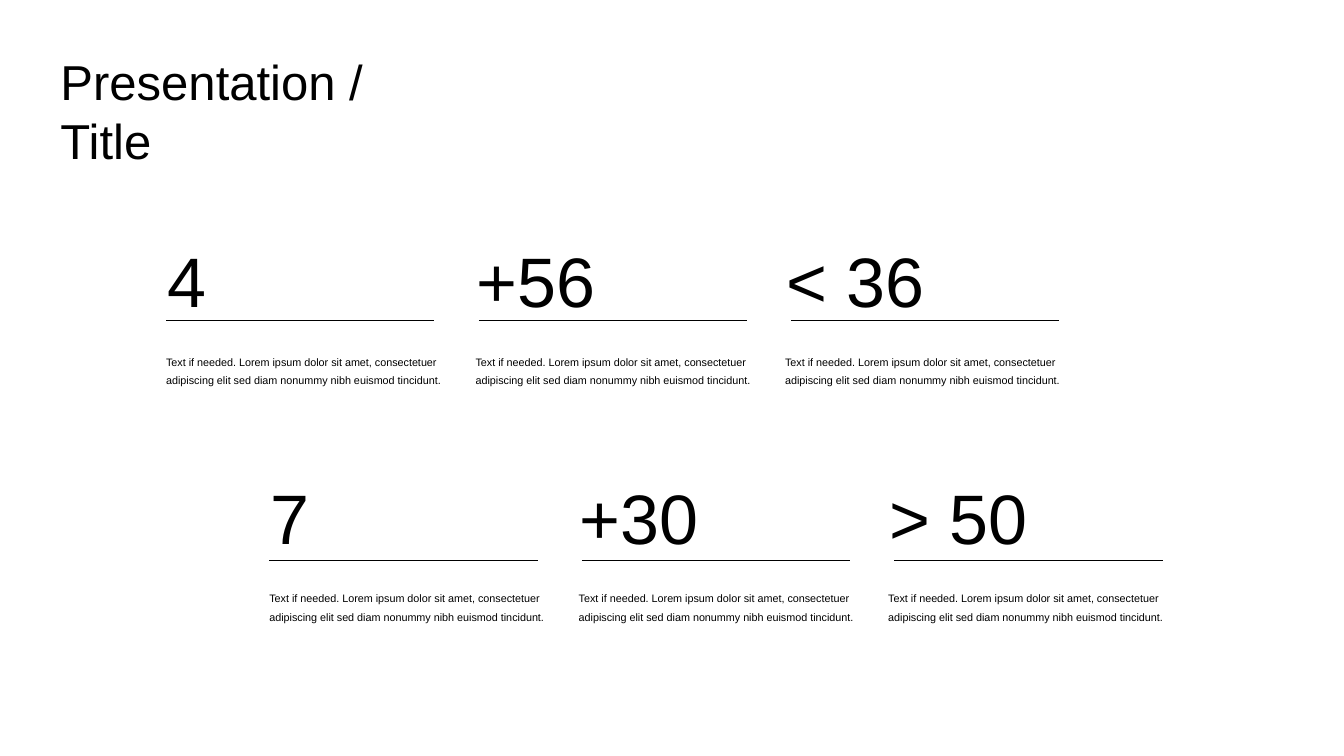
from dataclasses import dataclass

from lxml.etree import SubElement
from pptx import Presentation
from pptx.dml.color import RGBColor
from pptx.enum.shapes import MSO_CONNECTOR
from pptx.enum.text import MSO_ANCHOR, MSO_AUTO_SIZE, PP_ALIGN
from pptx.oxml.ns import qn
from pptx.util import Inches, Pt


@dataclass(frozen=True)
class Theme:
    font: str = "Arial"
    ink: RGBColor = RGBColor(0, 0, 0)
    paper: RGBColor = RGBColor(255, 255, 255)
    title: float = 35
    number: float = 50
    caption: float = 7.7
    rule: float = 1


theme = Theme()
deck = Presentation()
deck.slide_width, deck.slide_height = Inches(13.33), Inches(7.5)
COL, ROW = deck.slide_width / 40, deck.slide_height / 30

slide = deck.slides.add_slide(deck.slide_layouts[5])
slide.background.fill.solid()
slide.background.fill.fore_color.rgb = theme.paper


def write(text, x, y, wide, high, size, lead, inset=0.1, shape=None):
    """Set text in a grid box, either a given placeholder or a new text box."""
    place = [round(n) for n in (x * COL, y * ROW, wide * COL, high * ROW)]
    if shape is None:
        shape = slide.shapes.add_textbox(*place)
    shape.left, shape.top, shape.width, shape.height = place
    frame = shape.text_frame
    frame.word_wrap = True
    frame.auto_size = MSO_AUTO_SIZE.NONE
    frame.vertical_anchor = MSO_ANCHOR.TOP
    frame.margin_left = frame.margin_right = Inches(inset)
    frame.margin_top = frame.margin_bottom = Inches(0.05)
    frame.text = text
    for para in frame.paragraphs:
        para.alignment = PP_ALIGN.LEFT
        para.line_spacing = Pt(lead)
        para.space_before = Pt(0)
        para.font.name = theme.font
        para.font.size = Pt(size)
        para.font.color.rgb = theme.ink


write("Presentation /\nTitle", 1.59, 1.84, 16.05, 5.52,
      theme.title, lead=42, inset=0.07, shape=slide.shapes.title)

CAPTION = ("Text if needed. Lorem ipsum dolor sit amet, consectetuer "
           "adipiscing elit sed diam nonummy nibh euismod tincidunt.")
STATS = [["4", "+56", "< 36"], ["7", "+30", "> 50"]]
SHIFT = 3.07  # the second row is stepped to the right

for row, stats in enumerate(STATS):
    for col, stat in enumerate(stats):
        x = SHIFT * row + 9.21 * col
        y = 9.4 * row
        write(stat, 4.68 + x, 9.12 + y, 8.97, 3.36, theme.number, lead=62)
        write(CAPTION, 4.65 + x, 13.68 + y, 9, 2.48, theme.caption, lead=13.2)

        left = round((4.95 + SHIFT * row + 9.3 * col) * COL)
        level = round((12.72 + 9.52 * row) * ROW)
        rule = slide.shapes.add_connector(
            MSO_CONNECTOR.STRAIGHT, left, level, left + round(7.98 * COL), level)
        rule.line.color.rgb = theme.ink
        rule.line.width = Pt(theme.rule)
        SubElement(rule.element.spPr, qn("a:effectLst"))

deck.save("out.pptx")
